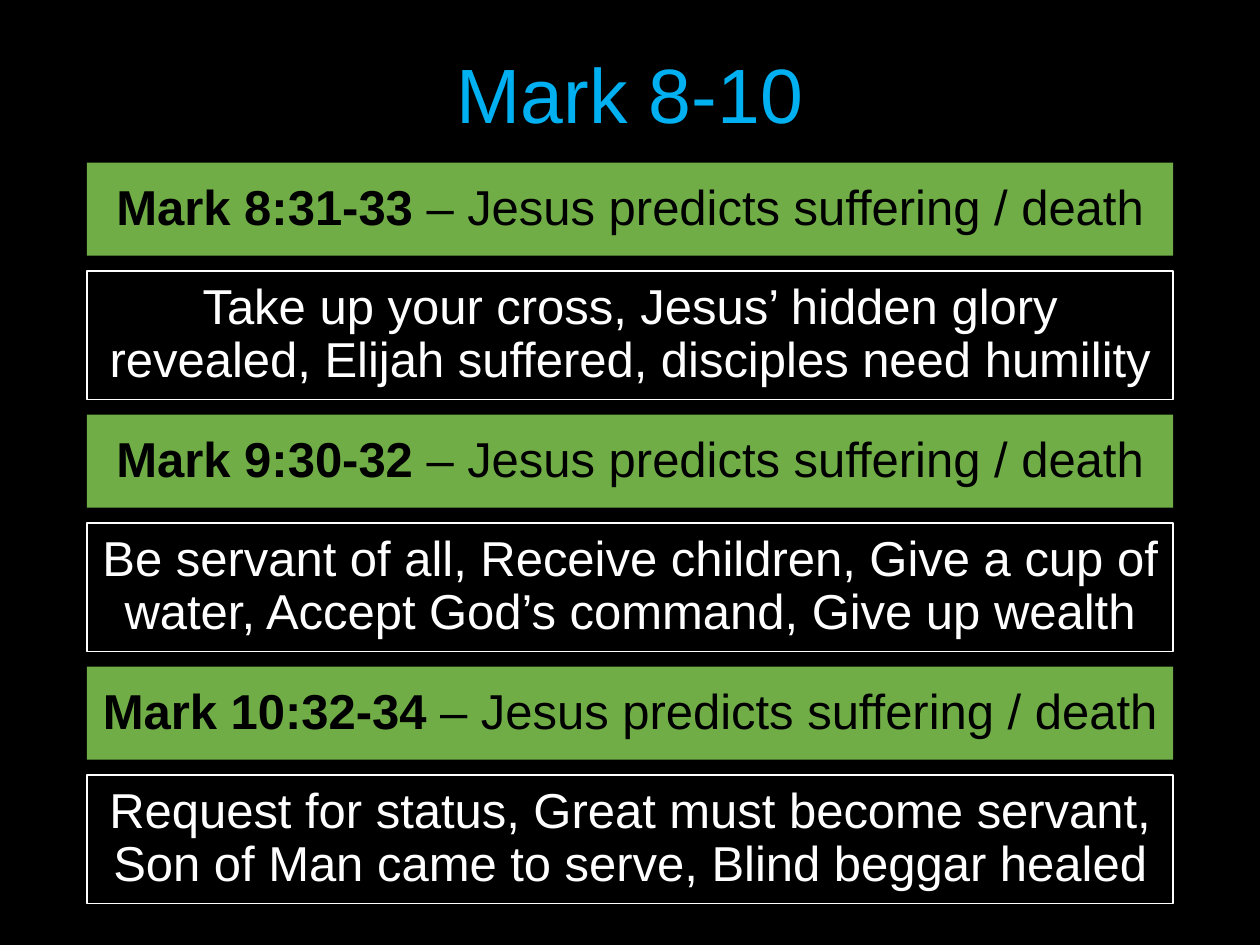
from dataclasses import dataclass

from pptx import Presentation
from pptx.dml.color import RGBColor as Rgb
from pptx.enum.shapes import MSO_SHAPE as Shape
from pptx.enum.text import MSO_ANCHOR as Anchor, PP_ALIGN as Align
from pptx.text.text import TextFrame
from pptx.util import Inches, Pt


@dataclass(frozen=True)
class Theme:
    back: Rgb = Rgb(0, 0, 0)
    green: Rgb = Rgb.from_string("70AD47")
    blue: Rgb = Rgb.from_string("00B0F0")
    white: Rgb = Rgb(255, 255, 255)
    font: str = "Arial"
    title: int = 44
    body: int = 28
    line: float = 0.75


@dataclass(frozen=True)
class Part:
    verse: str
    themes: str


THEME = Theme()
WIDTH, HEIGHT = 10, 7.5
LEFT = 0.69
SPAN = WIDTH - 2 * LEFT
TOP, PITCH = 1.29, 2.0
HEAD, BODY, GAP = 0.74, 1.02, 0.12
EVENT = "– Jesus predicts suffering / death"
PARTS = [
    Part("Mark 8:31-33", "Take up your cross, Jesus’ hidden glory revealed, "
         "Elijah suffered, disciples need humility"),
    Part("Mark 9:30-32", "Be servant of all, Receive children, Give a cup of water, "
         "Accept God’s command, Give up wealth"),
    Part("Mark 10:32-34", "Request for status, Great must become servant, "
         "Son of Man came to serve, Blind beggar healed"),
]


def place(top: float, high: float) -> tuple:
    """Give the frame of a full-width row."""
    return tuple(Inches(n) for n in (LEFT, top, SPAN, high))


def write(frame: TextFrame, text: str, size: int, color: Rgb, lead: str = "") -> None:
    """Fill a frame with one centred paragraph, after an optional bold lead."""
    frame.word_wrap = True
    frame.vertical_anchor = Anchor.MIDDLE
    para = frame.paragraphs[0]
    para.alignment = Align.CENTER
    para.line_spacing = 0.9
    para.font.name = THEME.font
    para.font.size = Pt(size)
    para.font.color.rgb = color
    if lead:
        run = para.add_run()
        run.text = lead + " "
        run.font.bold = True
    para.add_run().text = text


def add_box(slide, top: float, high: float):
    box = slide.shapes.add_shape(Shape.RECTANGLE, *place(top, high))
    box.shadow.inherit = False
    return box


def add_part(slide, part: Part, top: float) -> None:
    head = add_box(slide, top, HEAD)
    head.fill.solid()
    head.fill.fore_color.rgb = THEME.green
    head.line.fill.background()
    write(head.text_frame, EVENT, THEME.body, THEME.back, part.verse)

    body = add_box(slide, top + HEAD + GAP, BODY)
    body.fill.background()
    body.line.color.rgb = THEME.white
    body.line.width = Pt(THEME.line)
    write(body.text_frame, part.themes, THEME.body, THEME.white)


def main() -> None:
    deck = Presentation()
    deck.slide_width, deck.slide_height = Inches(WIDTH), Inches(HEIGHT)
    slide = deck.slides.add_slide(deck.slide_layouts[6])
    slide.background.fill.solid()
    slide.background.fill.fore_color.rgb = THEME.back

    title = slide.shapes.add_textbox(*place(0.4, 0.77))
    write(title.text_frame, "Mark 8-10", THEME.title, THEME.blue)
    for row, part in enumerate(PARTS):
        add_part(slide, part, TOP + row * PITCH)
    deck.save("out.pptx")


if __name__ == "__main__":
    main()
